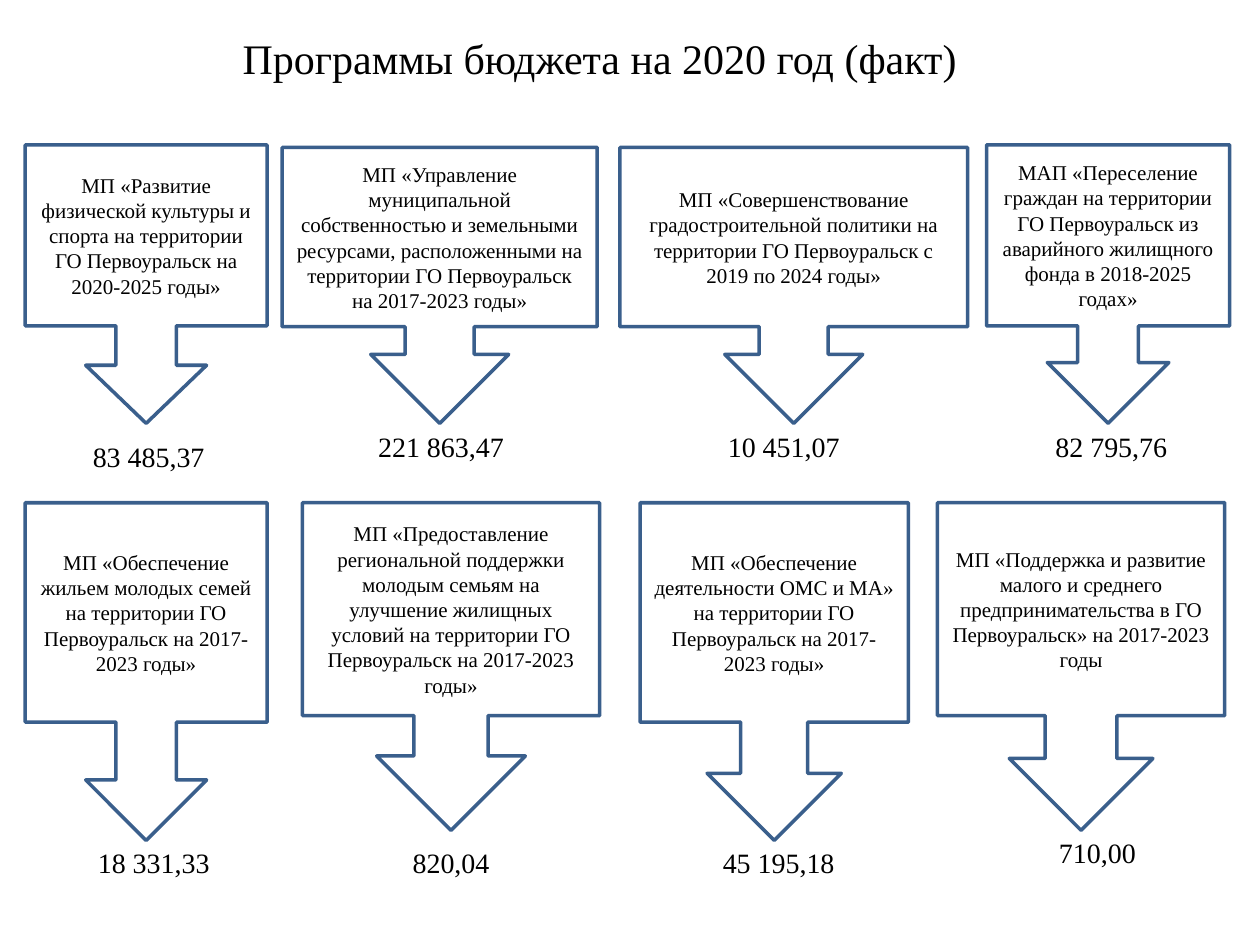
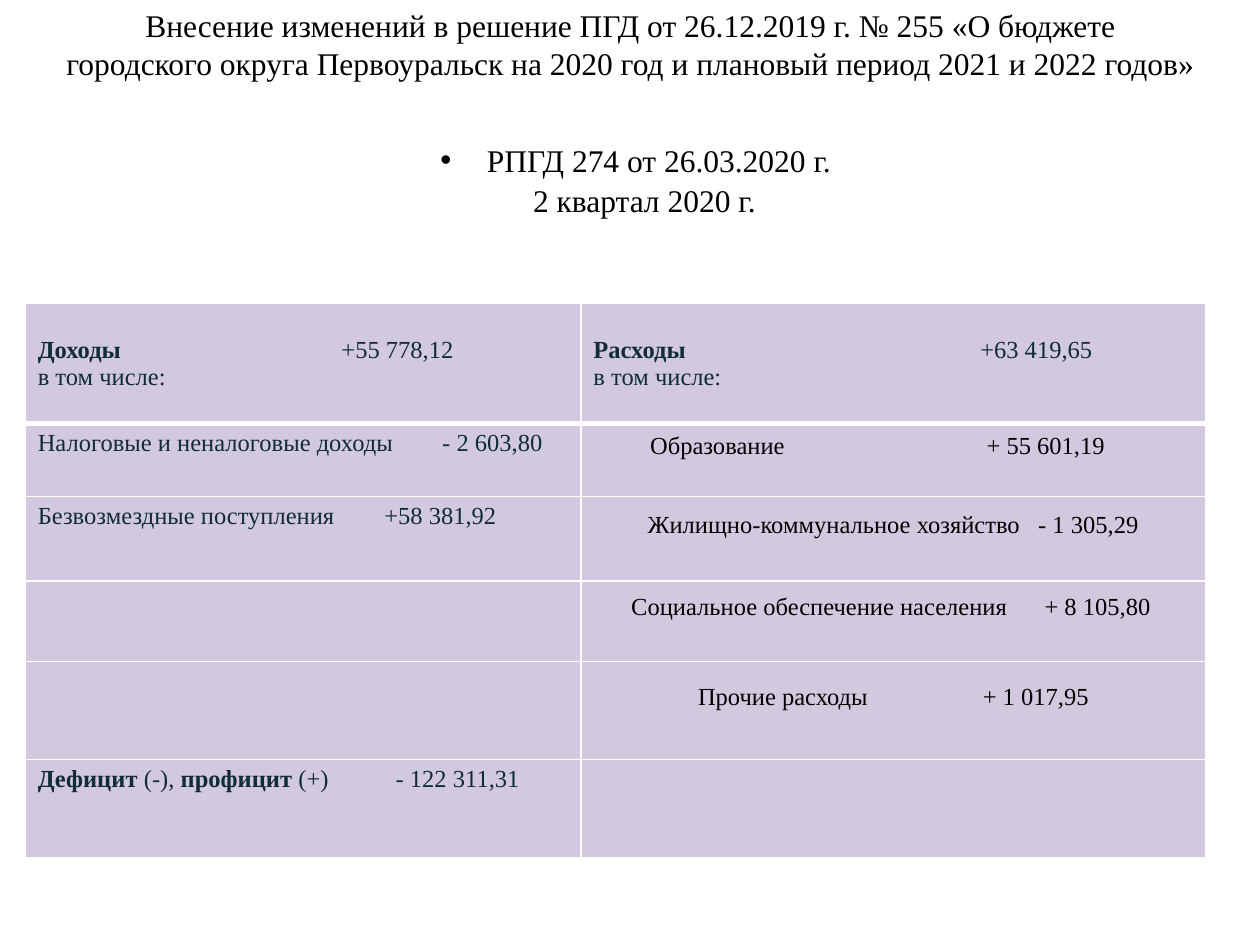
from dataclasses import dataclass
from typing import Optional

from lxml.etree import SubElement
from pptx import Presentation
from pptx.dml.color import RGBColor
from pptx.enum.shapes import MSO_SHAPE as Shape
from pptx.enum.text import MSO_ANCHOR as Anchor, MSO_AUTO_SIZE as Fit, PP_ALIGN as Align
from pptx.oxml import parse_xml
from pptx.oxml.ns import nsdecls, qn
from pptx.util import Inches, Pt

WIDE, HIGH = Inches(10), Inches(7.5)
COLS, ROWS = 100, 75
FACE = "Times New Roman"
INK, TEAL, BLUE, LILAC, WHITE = "000000", "102C34", "3A5F8C", "CCC1DA", "FFFFFF"


@dataclass(frozen=True)
class Area:
    left: float
    top: float
    width: float
    height: float

    def place(self) -> tuple:
        return (col(self.left), row(self.top), col(self.width), row(self.height))


@dataclass(frozen=True)
class Plan:
    area: Area
    text: str
    sum: str
    mid: float
    base: float
    head: float = 0.25


@dataclass(frozen=True)
class Item:
    text: str
    tab: float
    pad: float = 0
    ink: str = TEAL


def col(count: float) -> int:
    return round(WIDE * count / COLS)


def row(count: float) -> int:
    return round(HIGH * count / ROWS)


def tint(code: str) -> RGBColor:
    return RGBColor.from_string(code)


def style(para, size: float, ink: str = INK, align=Align.CENTER) -> None:
    para.alignment = align
    font = para.font
    font.name, font.size = FACE, Pt(size)
    font.color.rgb = tint(ink)


def write(frame, text: str, size: float, anchor=Anchor.TOP) -> None:
    frame.word_wrap = True
    frame.auto_size = Fit.NONE
    frame.vertical_anchor = anchor
    frame.text = text
    for para in frame.paragraphs:
        style(para, size)


def start(deck, text: str, area: Area, size: float):
    slide = deck.slides.add_slide(deck.slide_layouts[5])
    title = slide.shapes.title
    title.left, title.top, title.width, title.height = area.place()
    write(title.text_frame, text, size)
    return slide


def label(slide, text: str, area: Area, size: float):
    box = slide.shapes.add_textbox(*area.place())
    write(box.text_frame, text, size)
    return box


def draw(slide, plan: Plan) -> None:
    box = slide.shapes.add_shape(Shape.DOWN_ARROW_CALLOUT, *plan.area.place())
    box.adjustments[2] = plan.head
    box.shadow.inherit = False
    box.fill.background()
    box.line.color.rgb = tint(BLUE)
    box.line.width = Pt(2)
    write(box.text_frame, plan.text, 12, Anchor.MIDDLE)
    label(slide, plan.sum, Area(plan.mid - 9, plan.base, 18, 3.7), 16)


def edge(cell, sides: dict[str, float]) -> None:
    props = cell._tc.get_or_add_tcPr()
    for spot, (side, width) in enumerate(sides.items()):
        props.insert(spot, parse_xml(
            f'<a:ln{side} {nsdecls("a")} w="{Pt(width)}"><a:solidFill>'
            f'<a:srgbClr val="{WHITE}"/></a:solidFill></a:ln{side}>'))


def paint(cell) -> None:
    cell.fill.solid()
    cell.fill.fore_color.rgb = tint(LILAC)
    shade = cell._tc.tcPr.find(".//" + qn("a:srgbClr"))
    SubElement(shade, qn("a:alpha"), val="86000")


def fill(cell, item: Item) -> None:
    cell.margin_left = col(1 + item.pad)
    frame = cell.text_frame
    for spot, line in enumerate(item.text.split("\n")):
        para = frame.add_paragraph() if spot else frame.paragraphs[0]
        if "\t" in line:
            tabs = SubElement(para._p.get_or_add_pPr(), qn("a:tabLst"))
            SubElement(tabs, qn("a:tab"), pos=str(col(item.tab)), algn="l")
        style(para, 14, item.ink, Align.LEFT)
        for part, text in enumerate(line.split("*")):
            if text:
                run = para.add_run()
                run.text = text
                run.font.bold = part % 2 == 1


PLANS = [
    Plan(Area(2, 11.5, 19.2, 22.1), "МП «Развитие физической культуры и спорта на территории "
         "ГО Первоуральск на 2020-2025 годы»", "83 485,37", 11.8, 34.4, 0.24),
    Plan(Area(22.4, 11.7, 25, 21.9), "МП «Управление муниципальной собственностью и земельными "
         "ресурсами, расположенными на территории ГО Первоуральск на 2017-2023 годы»",
         "221 863,47", 35, 33.6),
    Plan(Area(49.2, 11.7, 27.6, 21.9), "МП «Совершенствование градостроительной политики на "
         "территории ГО Первоуральск с 2019 по 2024 годы»", "10 451,07", 62.2, 33.6),
    Plan(Area(78.3, 11.5, 19.3, 22.1), "МАП «Переселение граждан на территории ГО Первоуральск "
         "из аварийного жилищного фонда в 2018-2025 годах»", "82 795,76", 88.2, 33.6),
    Plan(Area(2, 39.9, 19.2, 26.8), "МП «Обеспечение жильем молодых семей на территории ГО "
         "Первоуральск на 2017-2023 годы»", "18 331,33", 12.2, 66.6),
    Plan(Area(24, 39.9, 23.6, 26), "МП «Предоставление региональной поддержки молодым семьям "
         "на улучшение жилищных условий на территории ГО Первоуральск на 2017-2023 годы»",
         "820,04", 35.8, 66.6),
    Plan(Area(50.8, 39.9, 21.3, 26.8), "МП «Обеспечение деятельности ОМС и МА» на территории "
         "ГО Первоуральск на 2017-2023 годы»", "45 195,18", 61.8, 66.6),
    Plan(Area(74.4, 39.9, 22.8, 26), "МП «Поддержка и развитие малого и среднего "
         "предпринимательства в ГО Первоуральск» на 2017-2023 годы", "710,00", 87.1, 65.8),
]

GRID: list[tuple[Optional[Item], Optional[Item]]] = [
    (Item("*Доходы*\t+55 778,12\nв том числе:", 24.1),
     Item("*Расходы*\t+63 419,65\nв том числе:", 30.7)),
    (Item("Налоговые и неналоговые доходы\t- 2 603,80", 32.1),
     Item("Образование\t+ 55 601,19", 26.7, 4.5, INK)),
    (Item("Безвозмездные поступления\t+58 381,92", 27.5),
     Item("Жилищно-коммунальное хозяйство\t- 1 305,29", 31, 4.3, INK)),
    (None, Item("Социальное обеспечение населения\t+ 8 105,80", 32.8, 3, INK)),
    (None, Item("Прочие расходы\t+ 1 017,95", 22.6, 8.3, INK)),
    (Item("*Дефицит *(-), *профицит *(+)\t- 122 311,31", 28.4), None),
]
SPANS = (44.1, 49.6)
STEPS = (9.5, 5.8, 6.7, 6.4, 7.8, 7.8)


def programs(deck) -> None:
    slide = start(deck, "Программы бюджета на 2020 год (факт)", Area(16.1, 2.1, 63, 5), 24)
    for plan in PLANS:
        draw(slide, plan)


def changes(deck) -> None:
    slide = start(deck, "Внесение изменений в решение ПГД от 26.12.2019 г. № 255 «О бюджете\n"
                  "городского округа Первоуральск на 2020 год и плановый период 2021 и 2022 годов»",
                  Area(2, 0, 96.1, 7.1), 18)
    area = Area(2, 24.1, sum(SPANS), sum(STEPS))
    table = slide.shapes.add_table(len(STEPS), len(SPANS), *area.place()).table
    table.first_row = table.horz_banding = False
    for spot, span in enumerate(SPANS):
        table.columns[spot].width = col(span)
    for spot, step in enumerate(STEPS):
        table.rows[spot].height = row(step)
        for side, item in enumerate(GRID[spot]):
            cell = table.cell(spot, side)
            paint(cell)
            edge(cell, {"L": 1, "R": 1, "T": 3 if spot == 1 else 1, "B": 1 if spot else 3})
            if spot == 0 or side == 1:
                cell.vertical_anchor = Anchor.MIDDLE
            if spot and side:
                cell.margin_bottom = row(2.7)
            if item:
                fill(cell, item)
    note = label(slide, "РПГД 274 от 26.03.2020 г.", Area(3.2, 10.7, 94.5, 4), 18)
    para = note.text_frame.paragraphs[0]
    props = para._p.get_or_add_pPr()
    props.set("marL", str(col(3.7)))
    props.set("indent", str(-col(3.7)))
    props.insert(0, parse_xml(f'<a:buFont {nsdecls("a")} typeface="Arial"/>'))
    props.insert(1, parse_xml(f'<a:buChar {nsdecls("a")} char="•"/>'))
    label(slide, "2 квартал 2020 г.", Area(30.3, 13.9, 41.7, 4), 18)


def main() -> None:
    deck = Presentation()
    deck.slide_width, deck.slide_height = WIDE, HIGH
    programs(deck)
    changes(deck)
    deck.save("out.pptx")


if __name__ == "__main__":
    main()
